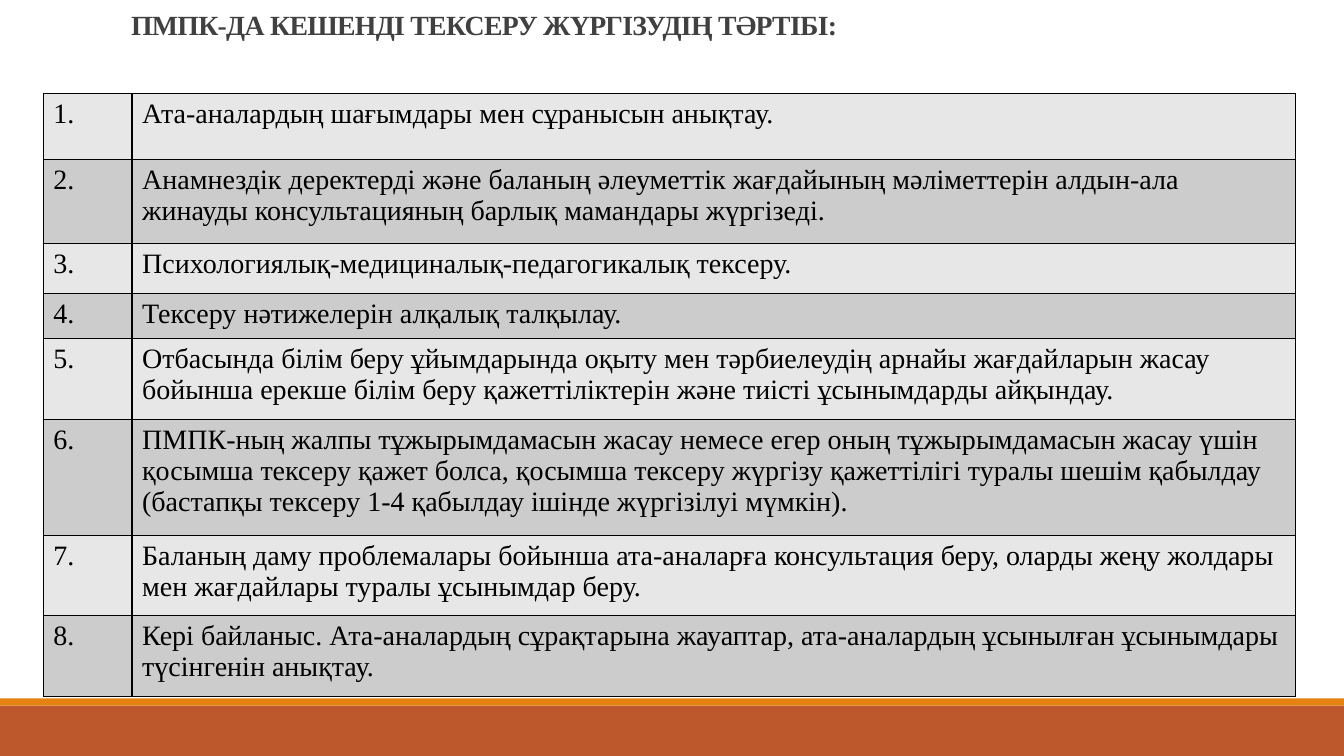
import pptx
import pptx.dml.color
import pptx.enum.shapes
import pptx.enum.text
import pptx.oxml
import pptx.oxml.ns
import pptx.util

Inches = pptx.util.Inches
Pt = pptx.util.Pt

# Content
HEADING = "ПМПК-ДА КЕШЕНДІ ТЕКСЕРУ ЖҮРГІЗУДІҢ ТӘРТІБІ:"
STEPS = [  # row height in inches, wording
    (0.65, "Ата-аналардың шағымдары мен сұранысын анықтау."),
    (0.84, "Анамнездік деректерді және баланың әлеуметтік жағдайының мәліметтерін "
           "алдын-ала жинауды консультацияның барлық мамандары жүргізеді."),
    (0.49, "Психологиялық-медициналық-педагогикалық тексеру."),
    (0.45, "Тексеру нәтижелерін алқалық талқылау."),
    (0.8, "Отбасында білім беру ұйымдарында оқыту мен тәрбиелеудің арнайы жағдайларын "
          "жасау бойынша ерекше білім беру қажеттіліктерін және тиісті ұсынымдарды айқындау."),
    (1.15, "ПМПК-ның жалпы тұжырымдамасын жасау немесе егер оның тұжырымдамасын жасау үшін "
           "қосымша тексеру қажет болса, қосымша тексеру жүргізу қажеттілігі туралы шешім "
           "қабылдау (бастапқы тексеру 1-4 қабылдау ішінде жүргізілуі мүмкін)."),
    (0.8, "Баланың даму проблемалары бойынша ата-аналарға консультация беру, оларды жеңу "
          "жолдары мен жағдайлары туралы ұсынымдар беру."),
    (0.8, "Кері байланыс. Ата-аналардың сұрақтарына жауаптар, ата-аналардың ұсынылған "
          "ұсынымдары түсінгенін анықтау."),
]
COLUMN_WIDTHS = (0.88, 11.54)
FOOTER_BANDS = [("rust", 7, 0.5), ("orange", 6.93, 0.07)]  # colour, top, height

THEME = {
    "rust": "BD582C", "orange": "E48312", "border": "000000",
    "rows": ("E7E7E7", "CCCCCC"),
    "heading": {"name": "Times New Roman", "size": Pt(19.8), "bold": True, "color": "404040"},
    "step": {"name": "Times New Roman", "size": Pt(20), "bold": False, "color": "000000"},
}


def rgb(code):
    return pptx.dml.color.RGBColor.from_string(code)


def write(paragraph, wording, style):
    run = paragraph.add_run()
    run.text = wording
    for key, value in style.items():
        if key == "color":
            run.font.color.rgb = rgb(value)
        else:
            setattr(run.font, key, value)
    return run


def add_borders(cell):
    properties = cell._tc.get_or_add_tcPr()
    for position, side in enumerate(("lnL", "lnR", "lnT", "lnB")):
        properties.insert(position, pptx.oxml.parse_xml(
            f'<a:{side} {pptx.oxml.ns.nsdecls("a")} w="12700"><a:solidFill>'
            f'<a:srgbClr val="{THEME["border"]}"/></a:solidFill></a:{side}>'))


def main():
    deck = pptx.Presentation()
    deck.slide_width, deck.slide_height = Inches(13.33), Inches(7.5)
    slide = deck.slides.add_slide(deck.slide_layouts[5])

    # Footer bands
    for color, top, height in FOOTER_BANDS:
        band = slide.shapes.add_shape(
            pptx.enum.shapes.MSO_SHAPE.RECTANGLE,
            0, Inches(top), deck.slide_width, Inches(height))
        band.shadow.inherit = False
        band.fill.solid()
        band.fill.fore_color.rgb = rgb(THEME[color])
        band.line.fill.background()

    # Heading
    heading = slide.shapes.title
    heading_place = {"left": 1.2, "top": 0.03, "width": 11, "height": 0.47}
    for key, value in heading_place.items():
        setattr(heading, key, Inches(value))
    frame = heading.text_frame
    frame_format = {
        "word_wrap": True, "auto_size": pptx.enum.text.MSO_AUTO_SIZE.NONE,
        "vertical_anchor": pptx.enum.text.MSO_ANCHOR.MIDDLE,
    }
    for key, value in frame_format.items():
        setattr(frame, key, value)
    line = frame.paragraphs[0]
    line.alignment = pptx.enum.text.PP_ALIGN.LEFT
    line.line_spacing = 0.85
    heading_run = write(line, HEADING, THEME["heading"])
    heading_run.font._element.set("spc", "-50")

    # Table of steps
    total_height = sum(height for height, _ in STEPS)
    steps = slide.shapes.add_table(
        len(STEPS), len(COLUMN_WIDTHS), Inches(0.43), Inches(0.93),
        Inches(sum(COLUMN_WIDTHS)), Inches(total_height)).table
    for column, width in zip(steps.columns, COLUMN_WIDTHS):
        column.width = Inches(width)
    for index, (height, wording) in enumerate(STEPS):
        steps.rows[index].height = Inches(height)
        for cell, entry in zip(steps.rows[index].cells, (f"{index + 1}.", wording)):
            write(cell.text_frame.paragraphs[0], entry, THEME["step"])
            cell.fill.solid()
            cell.fill.fore_color.rgb = rgb(THEME["rows"][index % 2])
            add_borders(cell)

    deck.save("out.pptx")


if __name__ == "__main__":
    main()
